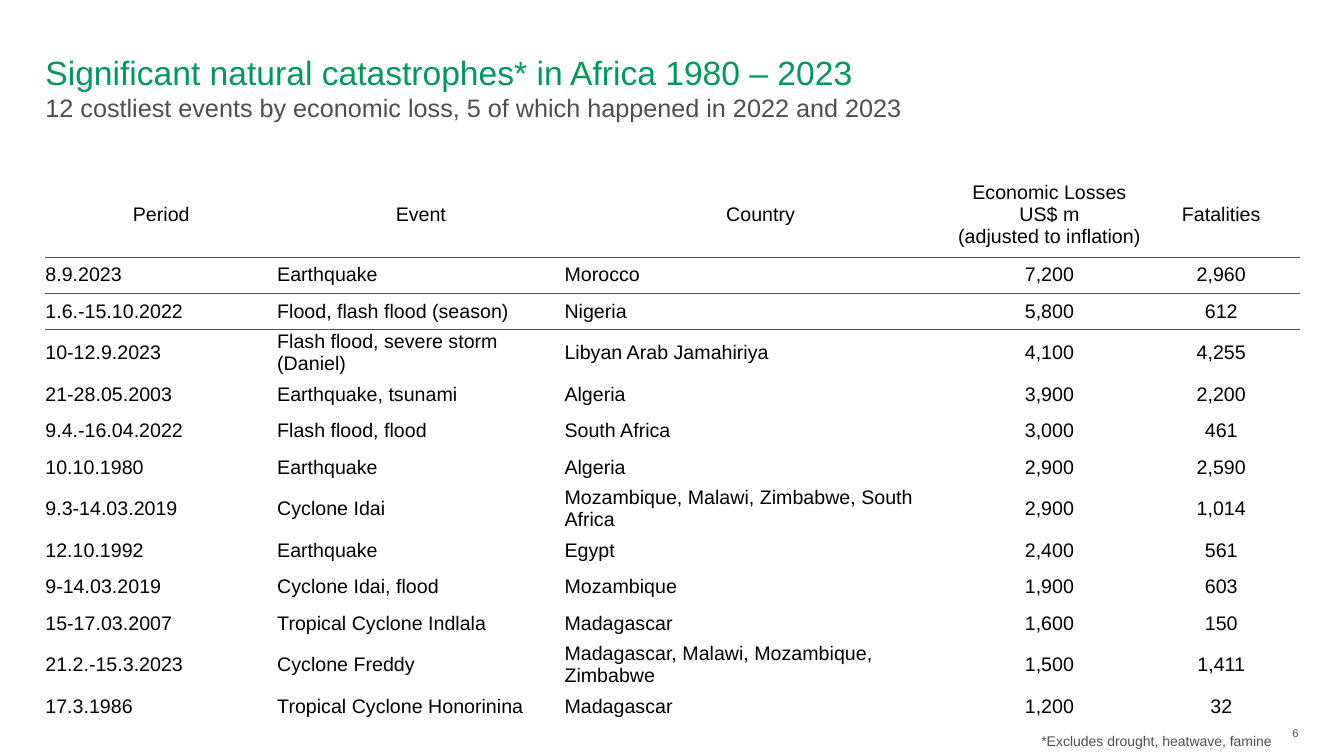
"""Build a slide with a table of the costliest natural catastrophes in Africa."""
from pptx import Presentation
from pptx.dml.color import RGBColor
from pptx.enum.text import MSO_ANCHOR as Anchor, PP_ALIGN as Align
from pptx.oxml import parse_xml
from pptx.oxml.ns import nsdecls
from pptx.util import Inches, Pt

GREEN = RGBColor(0x00, 0x97, 0x5D)
GRAY = RGBColor(0x4D, 0x4E, 0x53)
BLACK = RGBColor(0, 0, 0)

TITLE = "Significant natural catastrophes* in Africa 1980 – 2023"
SUB = "12 costliest events by economic loss, 5 of which happened in 2022 and 2023"
NOTE = "*Excludes drought, heatwave, famine"
PAGE = "6"
HEAD = ("Period", "Event", "Country",
        "Economic Losses US$ m\n(adjusted to inflation)", "Fatalities")
EVENTS = [
    ("8.9.2023", "Earthquake", "Morocco", "7,200", "2,960"),
    ("1.6.-15.10.2022", "Flood, flash flood (season)", "Nigeria", "5,800", "612"),
    ("10-12.9.2023", "Flash flood, severe storm (Daniel)",
     "Libyan Arab Jamahiriya", "4,100", "4,255"),
    ("21-28.05.2003", "Earthquake, tsunami", "Algeria", "3,900", "2,200"),
    ("9.4.-16.04.2022", "Flash flood, flood", "South Africa", "3,000", "461"),
    ("10.10.1980", "Earthquake", "Algeria", "2,900", "2,590"),
    ("9.3-14.03.2019", "Cyclone Idai",
     "Mozambique, Malawi, Zimbabwe, South Africa", "2,900", "1,014"),
    ("12.10.1992", "Earthquake", "Egypt", "2,400", "561"),
    ("9-14.03.2019", "Cyclone Idai, flood", "Mozambique", "1,900", "603"),
    ("15-17.03.2007", "Tropical Cyclone Indlala", "Madagascar", "1,600", "150"),
    ("21.2.-15.3.2023", "Cyclone Freddy",
     "Madagascar, Malawi, Mozambique, Zimbabwe", "1,500", "1,411"),
    ("17.3.1986", "Tropical Cyclone Honorinina", "Madagascar", "1,200", "32"),
]

WIDE, HIGH = Inches(13.33), Inches(7.5)
COLS = (17.25, 21.38, 29.18, 13.8, 11.78)
TOP_ROW, ROW = 11.2, 4.8
LEFT, TOP = 3.38, 22.8
BARE = {"margin_left": 0, "margin_top": 0, "margin_right": 0, "margin_bottom": 0}
MID = {**BARE, "vertical_anchor": Anchor.MIDDLE}
RULES = {0: ("lnB",), 1: ("lnB", "lnT"), 2: ("lnT",)}
PLAIN = "{2D5ABB26-0587-4C30-8999-92F81FD0307C}"


def across(share):
    return round(WIDE * share / 100)


def down(share):
    return round(HIGH * share / 100)


def apply(item, look):
    for key, value in look.items():
        setattr(item, key, value)


def style(font, size, color):
    apply(font, {"name": "Arial", "size": Pt(size), "bold": False})
    font.color.rgb = color


def write(slide, place, parts, frame, para):
    x, y, w, h = place
    box = slide.shapes.add_textbox(across(x), down(y), across(w), down(h))
    apply(box.text_frame, {"word_wrap": True, **frame})
    line = box.text_frame.paragraphs[0]
    apply(line, para)
    for spot, (text, size, color) in enumerate(parts):
        if spot:
            line.add_line_break()
        run = line.add_run()
        run.text = text
        style(run.font, size, color)


def rule(cell, side):
    cell._tc.get_or_add_tcPr().insert(0, parse_xml(
        f'<a:{side} {nsdecls("a")} w="9525"><a:solidFill>'
        f'<a:srgbClr val="{GRAY}"/></a:solidFill></a:{side}>'))


def fill(cell, text, row, col):
    apply(cell, MID)
    cell.fill.background()
    cell.text = text
    for line in cell.text_frame.paragraphs:
        line.alignment = Align.CENTER if row == 0 or col > 2 else Align.LEFT
        style(line.font, 14, BLACK)
    for side in RULES.get(row, ()):
        rule(cell, side)


def tabulate(slide):
    rows = [HEAD, *EVENTS]
    tall = TOP_ROW + ROW * len(EVENTS)
    table = slide.shapes.add_table(
        len(rows), len(COLS), across(LEFT), down(TOP),
        across(sum(COLS)), down(tall)).table
    apply(table, {"first_row": False, "horz_banding": False})
    table._tbl.tblPr[0].text = PLAIN
    for col, share in enumerate(COLS):
        table.columns[col].width = across(share)
    for row, texts in enumerate(rows):
        table.rows[row].height = down(ROW if row else TOP_ROW)
        for col, text in enumerate(texts):
            fill(table.cell(row, col), text, row, col)


def main():
    deck = Presentation()
    apply(deck, {"slide_width": WIDE, "slide_height": HIGH})
    slide = deck.slides.add_slide(deck.slide_layouts[6])
    write(slide, (LEFT, 6.93, 74.04, 11.87),
          [(TITLE, 24, GREEN), (SUB, 18, GRAY)], BARE, {})
    write(slide, (92.72, 95.2, 3.9, 3.47), [(PAGE, 8, GRAY)],
          MID, {"alignment": Align.RIGHT})
    tabulate(slide)
    write(slide, (76.74, 96, 19.95, 3.6), [(NOTE, 10, GRAY)],
          {}, {"line_spacing": 1.1})
    deck.save("out.pptx")


if __name__ == "__main__":
    main()
